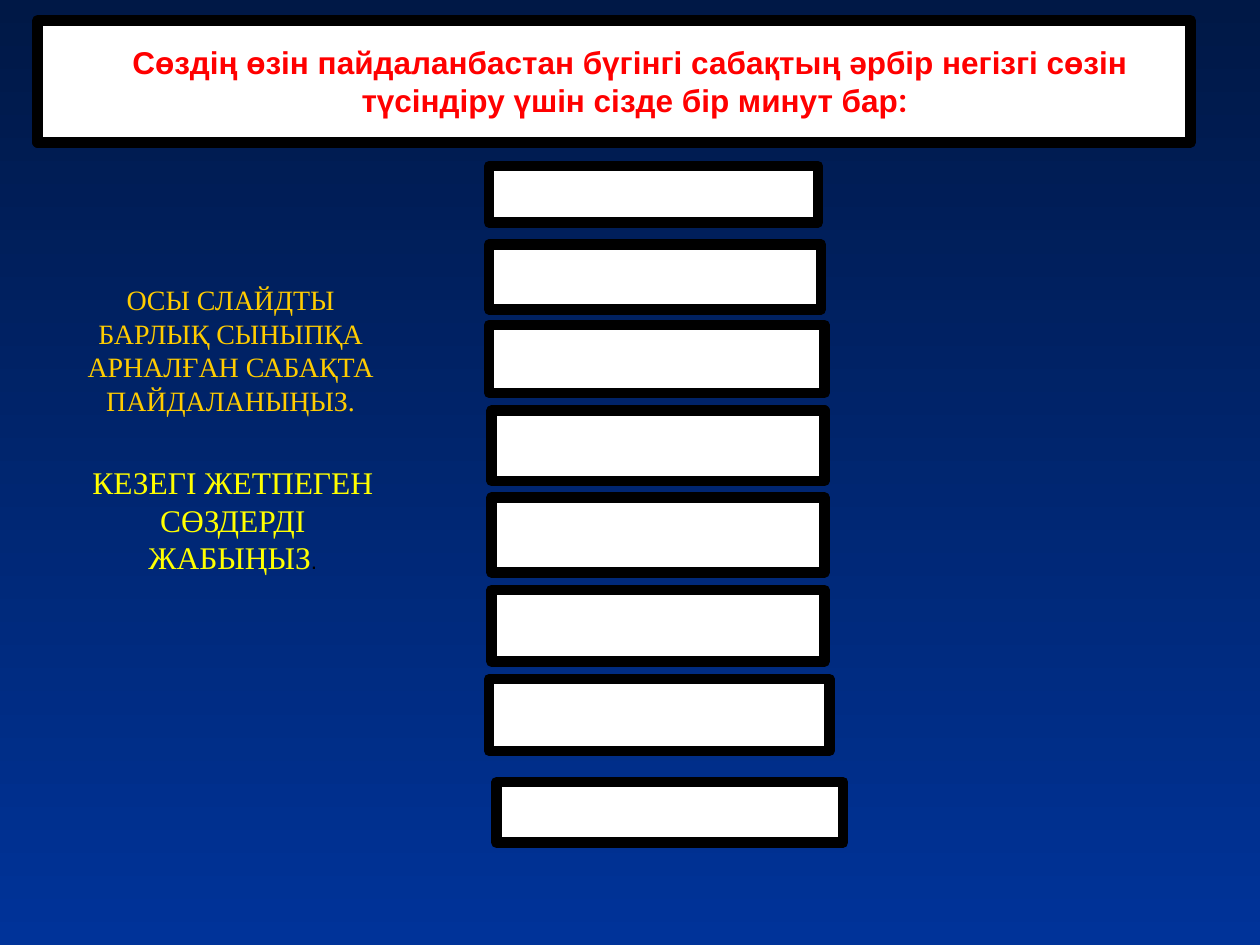
from pptx import Presentation
from pptx.dml.color import RGBColor
from pptx.enum.shapes import MSO_SHAPE
from pptx.enum.text import MSO_AUTO_SIZE, PP_ALIGN
from pptx.util import Cm, Pt

RECT = MSO_SHAPE.RECTANGLE
CENTER = PP_ALIGN.CENTER
GROW = MSO_AUTO_SIZE.SHAPE_TO_FIT_TEXT

THEME = {
    "top": "001846", "base": "003399", "card": "FFFFFF", "edge": "000000",
    "width": 6,
    # run styles: font, size, colour, bold
    "head": ("Arial", 18, "FF0000", True),
    "colon": ("Roboto", 18, "FF0000", True),
    "call": ("Times New Roman", 18, "FFFF00", False),
    "dot": ("Arial", 13, "000000", False),
    "hint": ("Times New Roman", 16, "FFCC00", False),
}

# Boxes are left, top, width, height in centimetres
BANNER = (0.76, 0.41, 23.24, 2.46)
CARDS = [
    (9.86, 3.35, 6.63, 1.14),
    (9.86, 4.93, 6.69, 1.31),
    (9.86, 6.55, 6.76, 1.37),
    (9.91, 8.28, 6.71, 1.42),
    (9.91, 10.03, 6.71, 1.51),
    (9.91, 11.89, 6.71, 1.45),
    (9.86, 13.69, 6.86, 1.45),
    (10.01, 15.77, 6.99, 1.22),
]
# Each text is a box and its paragraphs of (words, style) runs
TEXTS = [
    ((0.28, 0.76, 25.02, 1.75), [
        [("Сөздің өзін пайдаланбастан бүгінгі сабақтың әрбір негізгі сөзін ", "head")],
        [("түсіндіру үшін сізде бір минут бар", "head"), (":", "colon")],
    ]),
    ((1.37, 9.22, 6.65, 2.54), [
        [("КЕЗЕГІ ЖЕТПЕГЕН СӨЗДЕРДІ ЖАБЫҢЫЗ", "call"), (".", "dot")],
    ]),
    ((1.35, 5.59, 6.6, 2.95), [
        [("ОСЫ СЛАЙДТЫ БАРЛЫҚ СЫНЫПҚА АРНАЛҒАН САБАҚТА ПАЙДАЛАНЫҢЫЗ.", "hint")],
    ]),
]


def color(name):
    return RGBColor.from_string(name)


def place(box):
    return [Cm(side) for side in box]


def paint(slide):
    """Fill the background from dark at the top to blue at the base."""
    fill = slide.background.fill
    fill.gradient()
    fill.gradient_angle = 270
    for stop, key, spot in zip(fill.gradient_stops, ("top", "base"), (0, 1)):
        stop.color.rgb = color(THEME[key])
        stop.position = spot


def add_card(slide, box):
    card = slide.shapes.add_shape(RECT, *place(box))
    card.shadow.inherit = False
    card.fill.solid()
    card.fill.fore_color.rgb = color(THEME["card"])
    card.line.color.rgb = color(THEME["edge"])
    card.line.width = Pt(THEME["width"])


def add_text(slide, box, paras):
    frame = slide.shapes.add_textbox(*place(box)).text_frame
    frame.word_wrap = True
    frame.auto_size = GROW
    frame.margin_left = frame.margin_right = Cm(0.23)
    frame.margin_top = frame.margin_bottom = Cm(0.11)
    for i, runs in enumerate(paras):
        para = frame.add_paragraph() if i else frame.paragraphs[0]
        para.alignment = CENTER
        for words, style in runs:
            run = para.add_run()
            run.text = words
            face, size, tint, bold = THEME[style]
            run.font.name = face
            run.font.size = Pt(size)
            run.font.bold = bold
            run.font.color.rgb = color(tint)


def main():
    deck = Presentation()
    deck.slide_width, deck.slide_height = Cm(25.4), Cm(19.05)
    slide = deck.slides.add_slide(deck.slide_layouts[6])
    paint(slide)
    for box in [BANNER, *CARDS]:
        add_card(slide, box)
    for box, paras in TEXTS:
        add_text(slide, box, paras)
    deck.save("out.pptx")


if __name__ == "__main__":
    main()
